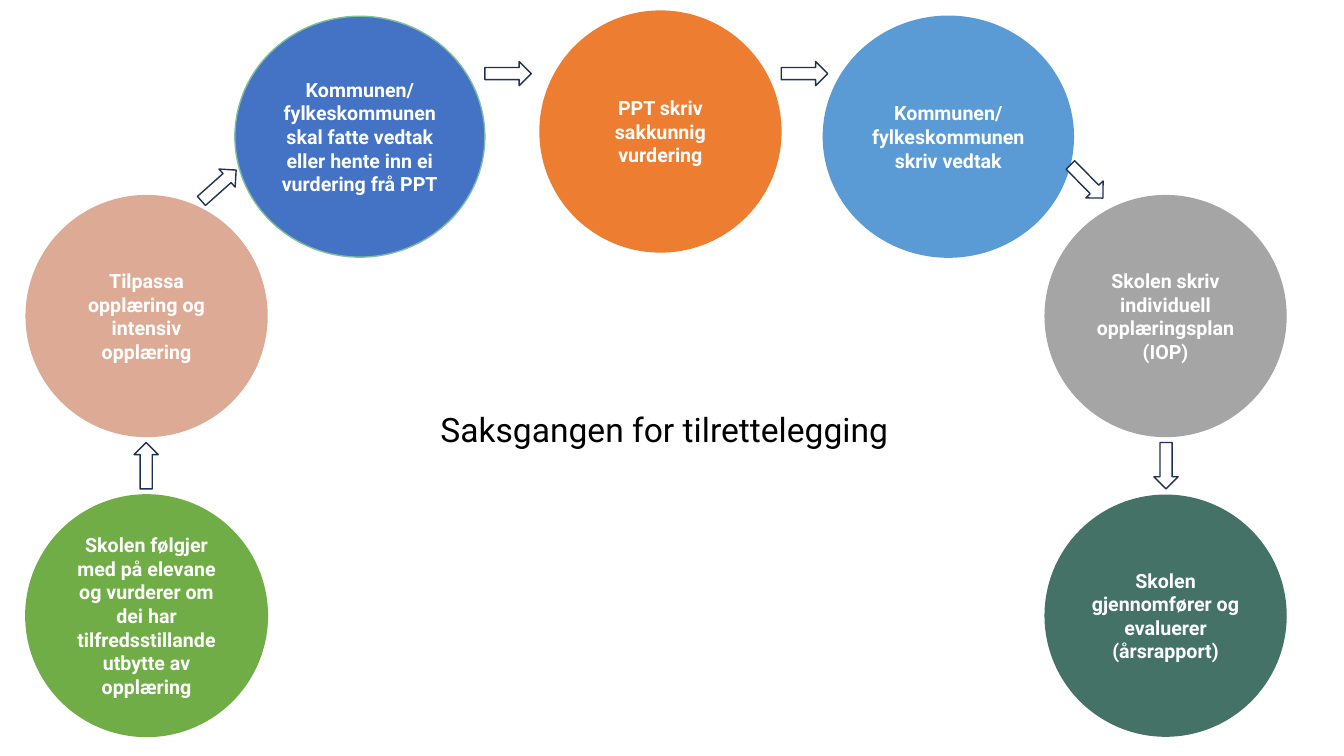
"""Build a slide with the seven steps of a school support case."""
import pptx
import pptx.dml.color
import pptx.enum.shapes
import pptx.enum.text
import pptx.util

Cm = pptx.util.Cm
Pt = pptx.util.Pt
Kind = pptx.enum.shapes.MSO_SHAPE
Align = pptx.enum.text.PP_ALIGN
Anchor = pptx.enum.text.MSO_ANCHOR

HEADING = "Saksgangen for tilrettelegging"

LEFT, RIGHT = 0.66, 26.34
LOW, MIDDLE, HIGH, TOP = 12.48, 4.93, 0.41, 0.28
ROUND, WIDE = 6.07, 6.3

STEPS = [
    {"text": "Skolen følgjer med på elevane og vurderer om dei har "
             "tilfredsstillande utbytte av opplæring",
     "place": (LEFT, LOW, ROUND), "color": "green", "width": 1.5},
    {"text": "Tilpassa opplæring og intensiv opplæring",
     "place": (LEFT, MIDDLE, ROUND), "color": "rose"},
    {"text": "Kommunen/ fylkeskommunen skal fatte vedtak eller hente inn ei "
             "vurdering frå PPT",
     "place": (5.92, HIGH, WIDE), "color": "blue", "edge": "mint"},
    {"text": "PPT skriv sakkunnig vurdering",
     "place": (13.61, TOP, ROUND), "color": "orange"},
    {"text": "Kommunen/ fylkeskommunen skriv vedtak",
     "place": (20.75, HIGH, WIDE), "color": "sky"},
    {"text": "Skolen skriv individuell opplæringsplan (IOP)",
     "place": (RIGHT, MIDDLE, ROUND), "color": "grey"},
    {"text": "Skolen gjennomfører og evaluerer (årsrapport)",
     "place": (RIGHT, LOW, ROUND), "color": "pine"},
]

ARROWS = [
    (3.1, 11.43, 270),
    (4.93, 4.37, 318.3),
    (12.22, 1.55, 0),
    (19.69, 1.55, 0),
    (26.8, 4.27, 45.5),
    (28.8, 11.43, 90),
]

THEME = {
    "font": "Roboto",
    "heading_size": 24,
    "step_size": 14,
    "black": "000000", "white": "FFFFFF", "navy": "1E3256",
    "green": "70AD47", "rose": "DDAA95", "blue": "4472C4", "mint": "7DBF9D",
    "orange": "ED7D31", "sky": "5B9BD5", "grey": "A5A5A5", "pine": "447266",
}


def color(name):
    """Return the theme colour with this name."""
    return pptx.dml.color.RGBColor.from_string(THEME[name])


def apply(target, values):
    """Set each format value on the target."""
    for name, value in values.items():
        setattr(target, name, value)


def write(frame, text, ink, size, bold, align):
    """Put one formatted run in a text frame."""
    frame.word_wrap = True
    paragraph = frame.paragraphs[0]
    paragraph.alignment = align
    run = paragraph.add_run()
    run.text = text
    apply(run.font, {"name": THEME["font"], "size": Pt(THEME[size]), "bold": bold})
    run.font.color.rgb = color(ink)


def draw(slide, kind, box, fill, edge, width=1):
    """Add a flat preset shape with a fill and an outline."""
    shape = slide.shapes.add_shape(kind, *map(Cm, box))
    shape.shadow.inherit = False
    shape.fill.solid()
    shape.fill.fore_color.rgb = color(fill)
    shape.line.color.rgb = color(edge)
    shape.line.width = Pt(width)
    return shape


def main():
    """Lay out the heading, the steps and the arrows between them."""
    deck = pptx.Presentation()
    apply(deck, {"slide_width": Cm(33.87), "slide_height": Cm(19.05)})
    slide = deck.slides.add_slide(deck.slide_layouts[6])

    heading = slide.shapes.add_textbox(*map(Cm, (10.85, 10.19, 12.17, 1.27)))
    write(heading.text_frame, HEADING, "black", "heading_size", False, Align.LEFT)

    for index, step in enumerate(STEPS):
        left, top, width = step["place"]
        circle = draw(slide, Kind.FLOWCHART_CONNECTOR, (left, top, width, ROUND),
                      step["color"], step.get("edge", step["color"]), step.get("width", 1))
        circle.text_frame.vertical_anchor = Anchor.MIDDLE
        write(circle.text_frame, step["text"], "white", "step_size", True, Align.CENTER)
        if index < len(ARROWS):
            left, top, angle = ARROWS[index]
            arrow = draw(slide, Kind.RIGHT_ARROW, (left, top, 1.17, 0.61), "white", "navy")
            arrow.rotation = angle

    deck.save("out.pptx")


if __name__ == "__main__":
    main()
